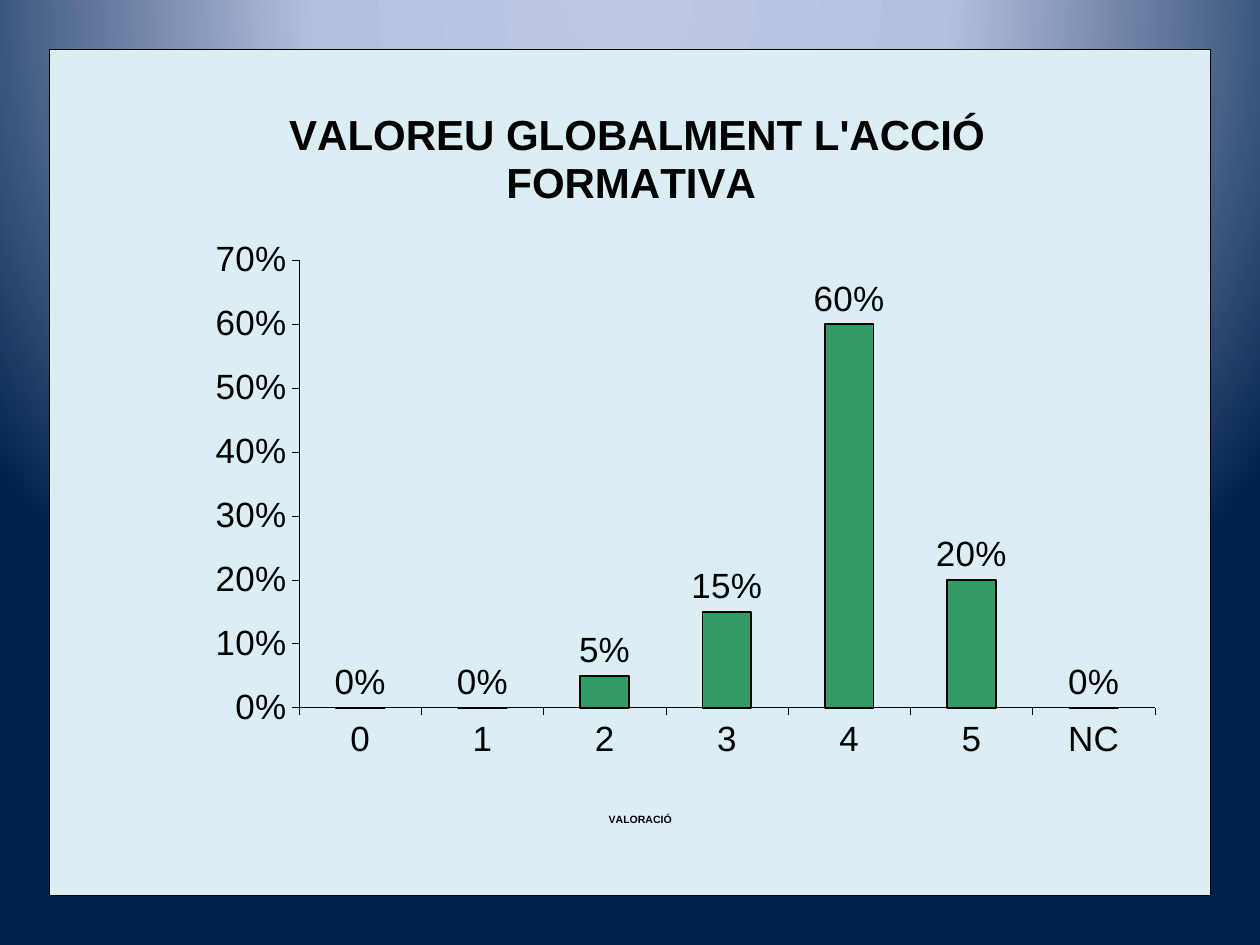
from pptx import Presentation
from pptx.chart.data import CategoryChartData
from pptx.dml.color import RGBColor
from pptx.enum.chart import XL_CHART_TYPE as ChartType
from pptx.enum.chart import XL_LABEL_POSITION as LabelPos
from pptx.enum.chart import XL_TICK_MARK as Tick
from pptx.oxml import parse_xml
from pptx.oxml.ns import nsdecls, qn
from pptx.util import Inches, Pt

WIDTH, HEIGHT = 10, 7.5
BLACK, GREEN, PALE = "000000", "339966", "DBEEF4"
SHARES = {"0": 0, "1": 0, "2": 0.05, "3": 0.15, "4": 0.6, "5": 0.2, "NC": 0}


def color(value):
    return RGBColor.from_string(value)


def style_font(font, size, bold=False):
    values = {"name": "Arial", "size": Pt(size), "bold": bold}
    for name, value in values.items():
        setattr(font, name, value)
    font.color.rgb = color(BLACK)


def style_line(line, width):
    line.color.rgb = color(BLACK)
    line.width = Pt(width)


def set_background(s):
    """Circular gradient centred above the slide."""
    stops = {0: "BFC9E5", 40: "B5C0E0", 100: "00234D"}
    gs = "".join(f'<a:gs pos="{pos * 1000}"><a:srgbClr val="{rgb}"/></a:gs>'
                 for pos, rgb in stops.items())
    bg = parse_xml(
        f'<p:bg {nsdecls("p", "a")}><p:bgPr><a:gradFill rotWithShape="1">'
        f'<a:gsLst>{gs}</a:gsLst><a:path path="circle">'
        '<a:fillToRect l="50000" t="-80000" r="50000" b="180000"/></a:path>'
        '</a:gradFill><a:effectLst/></p:bgPr></p:bg>')
    s.element.cSld.insert(0, bg)


def set_layout(element, **shares):
    """Place a chart part by shares of the chart area."""
    for old in element.findall(qn("c:layout")):
        element.remove(old)
    inner = '<c:layoutTarget val="inner"/>' if "w" in shares else ""
    modes = "".join(f'<c:{k}Mode val="edge"/>' for k in "xy")
    sizes = "".join(f'<c:{k} val="{v}"/>' for k, v in shares.items())
    layout = parse_xml(f'<c:layout {nsdecls("c")}><c:manualLayout>'
                       f'{inner}{modes}{sizes}</c:manualLayout></c:layout>')
    element.insert(0 if element.find(qn("c:tx")) is None else 1, layout)


def set_title(title, text, size, x, y):
    tf = title.text_frame
    tf.text = text
    style_font(tf.paragraphs[0].runs[0].font, size, bold=True)
    set_layout(title._element, x=x, y=y)


def style_axis(axis):
    axis.has_major_gridlines = False
    axis.major_tick_mark, axis.minor_tick_mark = Tick.OUTSIDE, Tick.NONE
    style_line(axis.format.line, 0.25)
    style_font(axis.tick_labels.font, 20)


def fill_chart_area(chart):
    area = parse_xml(
        f'<c:spPr {nsdecls("c", "a")}>'
        f'<a:solidFill><a:srgbClr val="{PALE}"/></a:solidFill>'
        f'<a:ln w="{Pt(0.25)}"><a:solidFill><a:srgbClr val="{BLACK}"/>'
        '</a:solidFill></a:ln></c:spPr>')
    chart._chartSpace.find(qn("c:chart")).addnext(area)


def style_columns(plot):
    plot.gap_width = 150
    plot.vary_by_categories = False
    series = plot.series[0]
    series.format.fill.solid()
    series.format.fill.fore_color.rgb = color(GREEN)
    style_line(series.format.line, 1)
    labels = series.data_labels
    values = {"show_value": True, "number_format": "0%",
              "number_format_is_linked": False,
              "position": LabelPos.OUTSIDE_END}
    for name, value in values.items():
        setattr(labels, name, value)
    style_font(labels.font, 20)


def add_rating_chart(s):
    data = CategoryChartData(number_format="0%")
    data.categories = list(SHARES)
    data.add_series("Series 1", list(SHARES.values()))
    margin = 0.39
    chart = s.shapes.add_chart(
        ChartType.COLUMN_CLUSTERED, Inches(margin), Inches(margin),
        Inches(WIDTH - 2 * margin), Inches(HEIGHT - 2 * margin), data).chart
    style_font(chart.font, 8)
    chart.has_legend = False
    fill_chart_area(chart)

    # Titles
    set_title(chart.chart_title, "VALOREU GLOBALMENT L'ACCIÓ FORMATIVA ",
              24, 0.2, 0.06)
    set_title(chart.category_axis.axis_title, "VALORACIÓ", 6, 0.48, 0.9)

    # Axes
    for axis in (chart.category_axis, chart.value_axis):
        style_axis(axis)
    value_axis = chart.value_axis
    value_axis.minimum_scale, value_axis.maximum_scale = 0, 0.7
    value_axis.major_unit = 0.1
    value_axis.tick_labels.number_format = "0%"
    value_axis.tick_labels.number_format_is_linked = False

    # Columns and plot area
    style_columns(chart.plots[0])
    set_layout(chart._chartSpace.chart.plotArea,
               x=0.215, y=0.249, w=0.737, h=0.529)


def main():
    prs = Presentation()
    prs.slide_width, prs.slide_height = Inches(WIDTH), Inches(HEIGHT)
    s = prs.slides.add_slide(prs.slide_layouts[6])
    set_background(s)
    add_rating_chart(s)
    prs.save("out.pptx")


if __name__ == "__main__":
    main()
